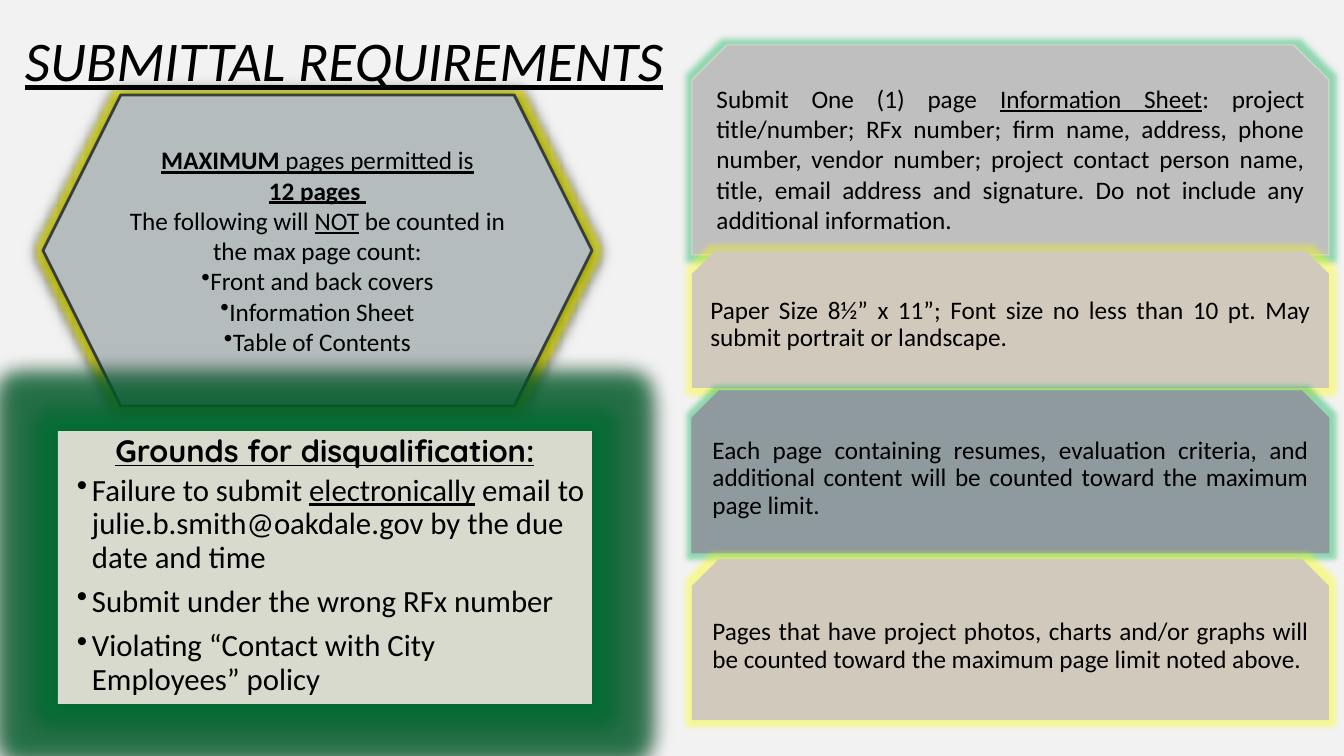
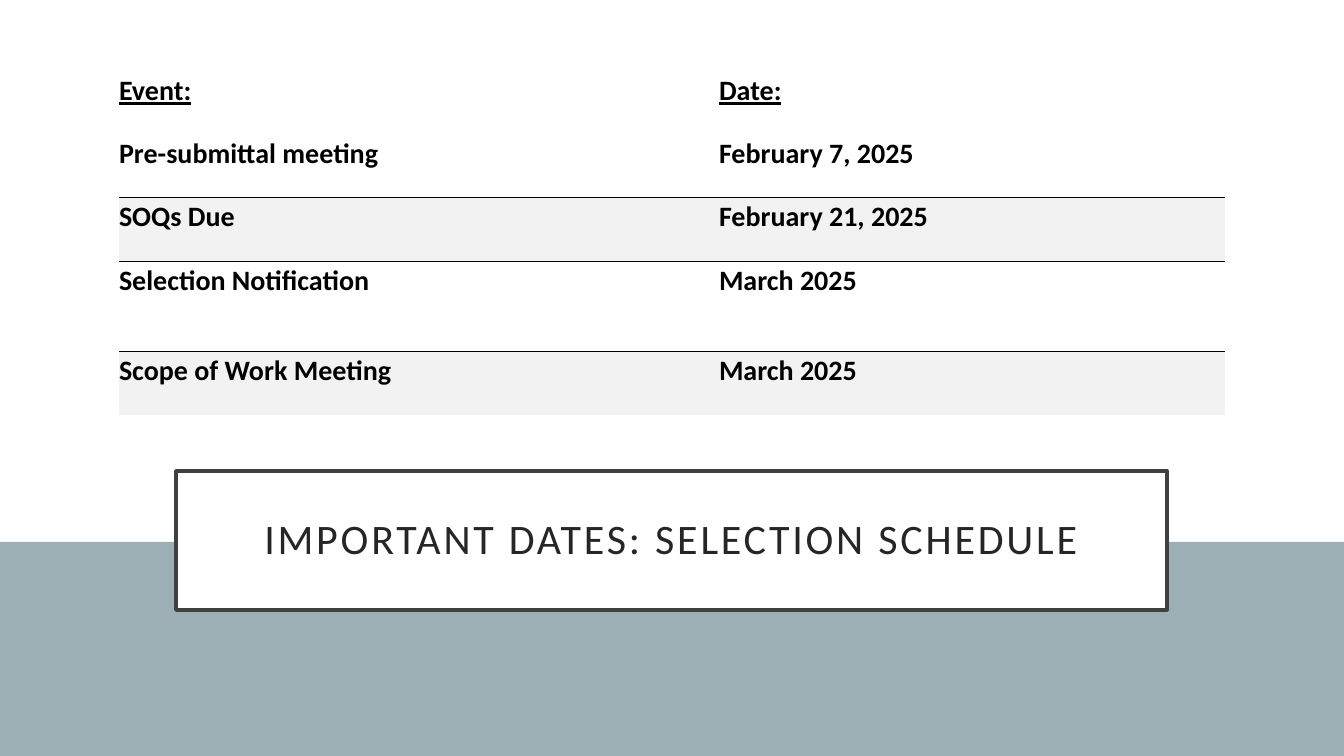
from dataclasses import dataclass

from lxml.etree import SubElement
from pptx import Presentation
from pptx.dml.color import RGBColor
from pptx.enum.shapes import MSO_SHAPE
from pptx.enum.text import MSO_ANCHOR, PP_ALIGN
from pptx.oxml.ns import qn
from pptx.util import Emu, Pt

BLACK = RGBColor(0x00, 0x00, 0x00)
WHITE = RGBColor(0xFF, 0xFF, 0xFF)
CHARCOAL = RGBColor(0x40, 0x40, 0x40)
TITLE_INK = RGBColor(0x26, 0x26, 0x26)
MIST = RGBColor(0xF2, 0xF2, 0xF2)
SILVER = RGBColor(0xBF, 0xBF, 0xBF)
BLUE_GRAY = RGBColor(0xB4, 0xBC, 0xBE)
SLATE = RGBColor(0x8E, 0x9A, 0x9E)
SLATE_EDGE = RGBColor(0x38, 0x3E, 0x40)
SAGE = RGBColor(0xD7, 0xDA, 0xCD)
SAND = RGBColor(0xD1, 0xCA, 0xBC)
TEAL = RGBColor(0x9B, 0xAF, 0xB5)
GREEN = RGBColor(0x00, 0xB0, 0x50)
DARK_GREEN = RGBColor(0x00, 0x7A, 0x37)
YELLOW = RGBColor(0xFF, 0xFF, 0x00)

FONT = "Calibri"
HEADING_FONT = "Quicksand"
SLIDE_WIDTH, SLIDE_HEIGHT = 1344, 756
EMU_PER_PX = 12192000 / SLIDE_WIDTH
NO_STYLE_TABLE = "{2D5ABB26-0587-4C30-8999-92F81FD0307C}"


def px(length):
    return Emu(round(length * EMU_PER_PX))


def add_color(parent, color, opacity=100):
    element = SubElement(parent, qn("a:srgbClr"), val=str(color))
    SubElement(element, qn("a:alpha"), val=str(opacity * 1000))


@dataclass
class Line:
    runs: list
    size: int = 18
    font: str = FONT
    color: RGBColor = BLACK
    align: PP_ALIGN = PP_ALIGN.LEFT
    bold: bool = False
    italic: bool = False
    underline: bool = False
    spacing: float = 1.0
    before: int = 0
    after: int = 0
    bullet: bool = False
    margin: int = 0
    indent: int = 0
    tracking: int = 0


class Deck:
    def __init__(self):
        self.presentation = Presentation()
        self.presentation.slide_width = px(SLIDE_WIDTH)
        self.presentation.slide_height = px(SLIDE_HEIGHT)
        self.slide = None

    def add_slide(self, background):
        self.slide = self.presentation.slides.add_slide(self.presentation.slide_layouts[6])
        self.slide.background.fill.solid()
        self.slide.background.fill.fore_color.rgb = background

    def fill_frame(self, frame, lines, insets=(10, 5, 10, 5), anchor=MSO_ANCHOR.TOP):
        frame.word_wrap = True
        frame.vertical_anchor = anchor
        (frame.margin_left, frame.margin_top,
         frame.margin_right, frame.margin_bottom) = map(px, insets)
        for index, line in enumerate(lines):
            paragraph = frame.add_paragraph() if index else frame.paragraphs[0]
            self.fill_paragraph(paragraph, line)

    def fill_paragraph(self, paragraph, line):
        if line.bullet:
            properties = paragraph._p.get_or_add_pPr()
            properties.set("marL", str(px(line.margin)))
            properties.set("indent", str(px(line.indent)))
            SubElement(properties, qn("a:buChar"), char="•")
        paragraph.alignment = line.align
        paragraph.line_spacing = line.spacing
        paragraph.space_before = Pt(line.before)
        paragraph.space_after = Pt(line.after)
        font = paragraph.font
        font.size, font.name = Pt(line.size), line.font
        font.bold, font.italic, font.underline = line.bold, line.italic, line.underline
        font.color.rgb = line.color
        for text, marks in line.runs:
            run = paragraph.add_run()
            run.text = text
            if "b" in marks:
                run.font.bold = True
            if "u" in marks:
                run.font.underline = True
            if line.tracking:
                run._r.get_or_add_rPr().set("spc", str(line.tracking * 100))

    def add_shape(self, kind, box, fill, outline=None, weight=1.0):
        shape = self.slide.shapes.add_shape(kind, *map(px, box))
        shape.shadow.inherit = False
        shape.fill.solid()
        shape.fill.fore_color.rgb = fill
        if outline is None:
            shape.line.fill.background()
        else:
            shape.line.color.rgb = outline
            shape.line.width = Pt(weight)
        return shape

    def add_glow(self, shape, color, radius, opacity, shadow=False):
        effects = shape._element.spPr.find(qn("a:effectLst"))
        glow = SubElement(effects, qn("a:glow"), rad=str(Pt(radius)))
        add_color(glow, color, opacity)
        if shadow:
            outer = SubElement(effects, qn("a:outerShdw"), blurRad=str(Pt(8.5)),
                               dist=str(Pt(1)), dir="5400000", algn="ctr", rotWithShape="0")
            add_color(outer, BLACK)

    def add_text(self, box, lines):
        text_box = self.slide.shapes.add_textbox(*map(px, box))
        self.fill_frame(text_box.text_frame, lines)

    def add_band(self, top, height, fill, glow, runs, spacing=0.9, outline=None):
        band = self.add_shape(MSO_SHAPE.SNIP_2_SAME_RECTANGLE, (692, top, 637, height),
                              fill, outline, 0.75)
        self.add_glow(band, glow, 8, 40)
        line = Line(runs, align=PP_ALIGN.JUSTIFY, spacing=spacing)
        self.fill_frame(band.text_frame, [line], (7, 7, 7, 7), MSO_ANCHOR.MIDDLE)

    def add_schedule(self, left, top, widths, heights, rows):
        frame = self.slide.shapes.add_table(len(rows), len(widths), px(left), px(top),
                                            px(sum(widths)), px(sum(heights)))
        table = frame.table
        table.first_row = table.horz_banding = False
        table._tbl.tblPr.find(qn("a:tableStyleId")).text = NO_STYLE_TABLE
        for column, width in zip(table.columns, widths):
            column.width = px(width)
        for index, (height, texts) in enumerate(zip(heights, rows)):
            table.rows[index].height = px(height)
            shaded = index > 0 and index % 2 == 0
            for column, text in enumerate(texts):
                cell = table.cell(index, column)
                self.fill_cell(cell, text, shaded, index == 0)

    def fill_cell(self, cell, text, shaded, header):
        (cell.margin_left, cell.margin_top,
         cell.margin_right, cell.margin_bottom) = map(px, (0, 3, 9, 26))
        cell.vertical_anchor = MSO_ANCHOR.BOTTOM if header else MSO_ANCHOR.TOP
        line = Line([(text, "")], size=20, bold=True, underline=header)
        self.fill_paragraph(cell.text_frame.paragraphs[0], line)
        if shaded:
            border = SubElement(cell._tc.get_or_add_tcPr(), qn("a:lnT"), w=str(Pt(0.5)))
            add_color(SubElement(border, qn("a:solidFill")), BLACK)
            cell.fill.solid()
            cell.fill.fore_color.rgb = MIST
        else:
            cell.fill.background()


def build_requirements(deck):
    deck.add_slide(MIST)
    hexagon = deck.add_shape(MSO_SHAPE.HEXAGON, (43, 95, 549, 311), BLUE_GRAY, SLATE_EDGE, 2)
    deck.add_glow(hexagon, YELLOW, 8, 60, shadow=True)
    page_limit = [
        [("MAXIMUM", "bu"), (" pages permitted is", "u")],
        [("12 pages ", "bu")],
        [("The following will ", ""), ("NOT", "u"),
         (" be counted in the max page count:", "")],
    ]
    exempt = ["Front and back covers", "Information Sheet", "Table of Contents"]
    lines = [Line(runs, align=PP_ALIGN.CENTER) for runs in page_limit]
    lines += [Line([(text, "")], align=PP_ALIGN.CENTER, bullet=True) for text in exempt]
    deck.fill_frame(hexagon.text_frame, lines, anchor=MSO_ANCHOR.MIDDLE)

    grounds = deck.add_shape(MSO_SHAPE.RECTANGLE, (58, 431, 534, 273), SAGE)
    deck.add_glow(grounds, DARK_GREEN, 28, 60, shadow=True)
    reasons = [
        [("Failure to submit ", ""), ("electronically", "u"),
         (" email to julie.b.smith@oakdale.gov by the due date and time", "")],
        [("Submit under the wrong RFx number", "")],
        [("Violating “Contact with City Employees” policy", "")],
    ]
    heading = Line([("Grounds for disqualification:", "")], size=22, font=HEADING_FONT,
                   align=PP_ALIGN.CENTER, bold=True, underline=True, spacing=0.9, after=2)
    bullets = [Line(runs, size=22, spacing=0.9, before=2, after=6, bullet=True,
                    margin=29, indent=-15) for runs in reasons]
    deck.fill_frame(grounds.text_frame, [heading, *bullets], (5, 5, 5, 5))

    deck.add_band(45, 210, SILVER, GREEN, [
        ("Submit One (1) page ", ""), ("Information Sheet", "u"),
        (": project title/number; RFx number; firm name, address, phone number, "
         "vendor number; project contact person name, title, email address and "
         "signature. Do not include any additional information.", "")],
        spacing=1.0, outline=SAGE)
    deck.add_band(251, 137, SAND, YELLOW, [
        ("Paper Size 8½” x 11”; Font size no less than 10 pt. "
         "May submit portrait or landscape.", "")])
    deck.add_band(391, 162, SLATE, GREEN, [
        ("Each page containing resumes, evaluation criteria, and additional content "
         "will be counted toward the maximum page limit.", "")], outline=SLATE)
    deck.add_band(559, 161, SAND, YELLOW, [
        ("Pages that have project photos, charts and/or graphs will be counted "
         "toward the maximum page limit noted above.", "")])
    deck.add_text((15, 21, 818, 91), [
        Line([("SUBMITTAL REQUIREMENTS", "")], size=40, italic=True, underline=True)])


def build_schedule(deck):
    deck.add_slide(WHITE)
    deck.add_shape(MSO_SHAPE.RECTANGLE, (0, 542, SLIDE_WIDTH, 214), TEAL)
    title = deck.add_shape(MSO_SHAPE.RECTANGLE, (176, 471, 991, 139), WHITE, CHARCOAL, 2.5)
    deck.fill_frame(title.text_frame, [
        Line([("IMPORTANT DATES: SELECTION SCHEDULE", "")], size=30, color=TITLE_INK,
             align=PP_ALIGN.CENTER, spacing=0.9, tracking=2)],
        (30, 20, 30, 20), MSO_ANCHOR.MIDDLE)
    deck.add_schedule(119, 70, (600, 506), (64, 63, 64, 90, 64), [
        ("Event:", "Date:"),
        ("Pre-submittal meeting", "February 7, 2025"),
        ("SOQs Due", "February 21, 2025"),
        ("Selection Notification", "March 2025"),
        ("Scope of Work Meeting", "March 2025"),
    ])


def main():
    deck = Deck()
    build_requirements(deck)
    build_schedule(deck)
    deck.presentation.save("out.pptx")


if __name__ == "__main__":
    main()
